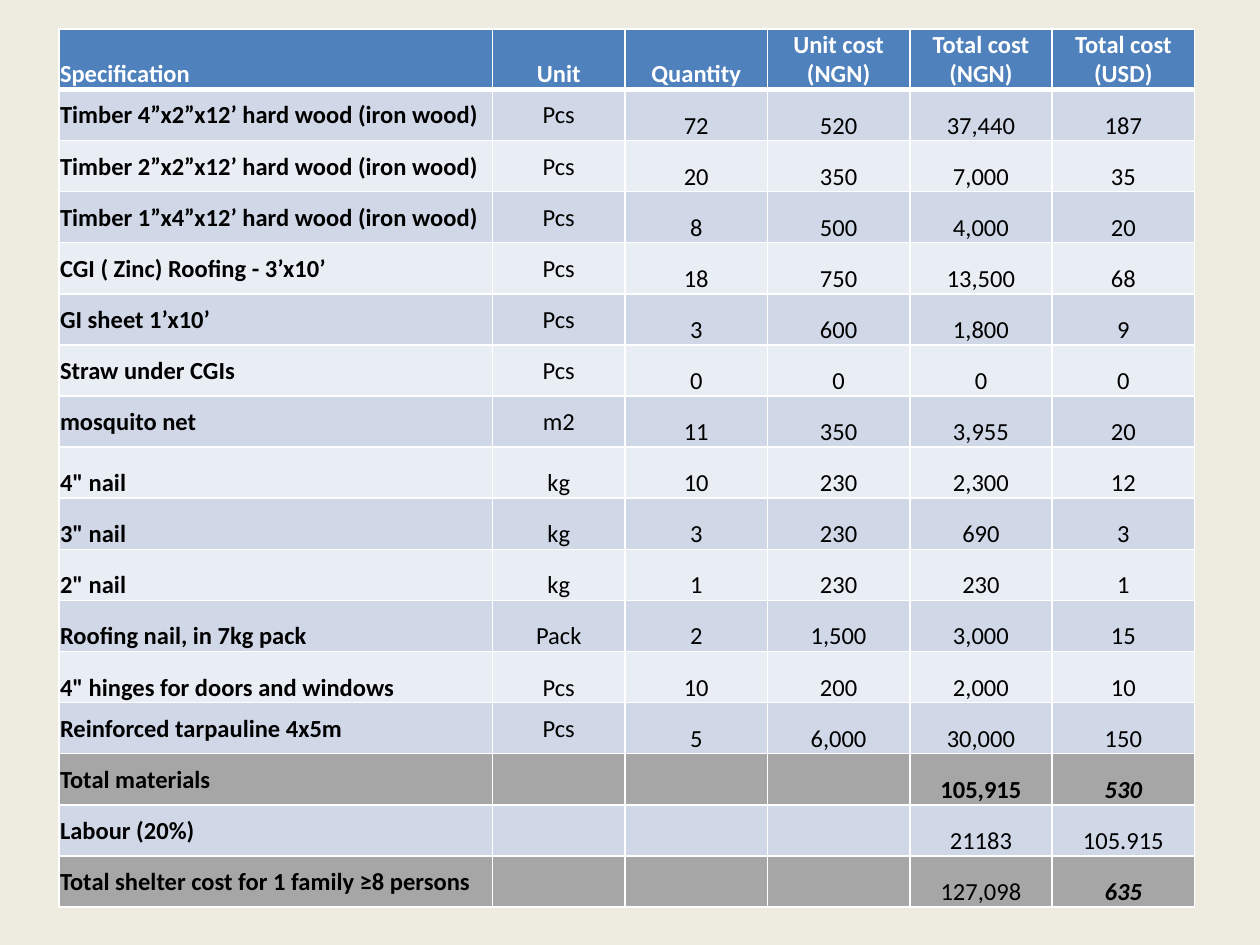
"""Build a one-slide cost table for a family shelter."""
import lxml.etree
import pptx
import pptx.dml.color
import pptx.enum.text
import pptx.oxml.ns
import pptx.util

Cm = pptx.util.Cm
Pt = pptx.util.Pt
ALIGN = pptx.enum.text.PP_ALIGN
ANCHOR = pptx.enum.text.MSO_ANCHOR

COLOURS = {
    "page": "EEECE1",
    "header": "4F81BD",
    "odd": "D0D8E8",
    "even": "E9EDF4",
    "total": "A6A6A6",
    "light": "FFFFFF",
    "dark": "000000",
}
HEADER = ["Specification", "Unit", "Quantity", "Unit cost (NGN)", "Total cost (NGN)", "Total cost (USD)"]
ITEMS = [
    ["Timber 4”x2”x12’ hard wood (iron wood)", "Pcs", "72", "520", "37,440", "187"],
    ["Timber 2”x2”x12’ hard wood (iron wood)", "Pcs", "20", "350", "7,000", "35"],
    ["Timber 1”x4”x12’ hard wood (iron wood)", "Pcs", "8", "500", "4,000", "20"],
    ["CGI ( Zinc) Roofing - 3’x10’", "Pcs", "18", "750", "13,500", "68"],
    ["GI sheet 1’x10’ ", "Pcs", "3", "600", "1,800", "9"],
    ["Straw under CGIs", "Pcs", "0", "0", "0", "0"],
    ["mosquito net", "m2", "11", "350", "3,955", "20"],
    ['4" nail', "kg", "10", "230", "2,300", "12"],
    ['3" nail', "kg", "3", "230", "690", "3"],
    ['2" nail', "kg", "1", "230", "230", "1"],
    ["Roofing nail, in 7kg pack", "Pack", "2", "1,500", "3,000", "15"],
    ['4" hinges for doors and windows', "Pcs", "10", "200", "2,000", "10"],
    ["Reinforced tarpauline 4x5m ", "Pcs", "5", "6,000", "30,000", "150"],
    ["Total materials", "", "", "", "105,915", "530"],
    ["Labour (20%)", "", "", "", "21183", "105.915"],
    ["Total shelter cost for 1 family ≥8 persons", "", "", "", "127,098", "635"],
]
COLUMN_WIDTHS = [8.74, 2.67] + [2.87] * 4
HEADER_HEIGHT, ROW_HEIGHT = 1.22, 1.03
HARDWARE_ROWS = range(8, 13)
BOLD_AMOUNTS = {"105,915", "530", "635"}
ITALIC_AMOUNTS = {"530", "635"}


class SlideBuilder:
    """Hold the text style and the current slide."""

    def __init__(self, deck, font="Calibri", size=14):
        self.font, self.size = font, size
        self.slide = deck.slides.add_slide(deck.slide_layouts[6])

    def colour(self, name):
        return pptx.dml.color.RGBColor.from_string(COLOURS[name])

    def background(self, name):
        fill = self.slide.background.fill
        fill.solid()
        fill.fore_color.rgb = self.colour(name)

    def borders(self, cell, top, bottom):
        properties = cell._tc.get_or_add_tcPr()
        sides = {"lnL": 1, "lnR": 1, "lnT": top, "lnB": bottom}
        for position, (side, width) in enumerate(sides.items()):
            line = lxml.etree.Element(pptx.oxml.ns.qn(f"a:{side}"), w=str(Pt(width)))
            fill = lxml.etree.SubElement(line, pptx.oxml.ns.qn("a:solidFill"))
            lxml.etree.SubElement(fill, pptx.oxml.ns.qn("a:srgbClr"), val=COLOURS["light"])
            properties.insert(position, line)

    def cell(self, cell, text, fill, ink, align, anchor, bold, italic):
        cell.margin_left = cell.margin_right = cell.margin_top = Cm(0.02)
        cell.margin_bottom = 0
        cell.vertical_anchor = anchor
        cell.fill.solid()
        cell.fill.fore_color.rgb = self.colour(fill)
        para = cell.text_frame.paragraphs[0]
        para.text = text
        para.alignment = align
        para.font.size = Pt(self.size)
        for span in para.runs:
            span.font.name, span.font.size = self.font, Pt(self.size)
            span.font.bold, span.font.italic = bold, italic
            span.font.color.rgb = self.colour(ink)

    def cost_table(self, left, top):
        rows = [HEADER] + ITEMS
        height = HEADER_HEIGHT + ROW_HEIGHT * len(ITEMS)
        table = self.slide.shapes.add_table(
            len(rows), len(HEADER), Cm(left), Cm(top), Cm(sum(COLUMN_WIDTHS)), Cm(height)
        ).table
        for column, width in zip(table.columns, COLUMN_WIDTHS):
            column.width = Cm(width)
        for row_index, values in enumerate(rows):
            is_header = row_index == 0
            table.rows[row_index].height = Cm(HEADER_HEIGHT if is_header else ROW_HEIGHT)
            if is_header:
                fill = "header"
            elif values[0].startswith("Total"):
                fill = "total"
            else:
                fill = "odd" if row_index % 2 else "even"
            bottom_row = is_header or row_index in HARDWARE_ROWS
            for column_index, text in enumerate(values):
                cell = table.cell(row_index, column_index)
                middle = column_index < 2 and not bottom_row
                label_align = ALIGN.LEFT if bottom_row else ALIGN.JUSTIFY
                self.cell(
                    cell, text, fill,
                    ink="light" if is_header else "dark",
                    align=ALIGN.CENTER if column_index else label_align,
                    anchor=ANCHOR.MIDDLE if middle else ANCHOR.BOTTOM,
                    bold=is_header or column_index == 0 or text in BOLD_AMOUNTS,
                    italic=text in ITALIC_AMOUNTS,
                )
                self.borders(cell, top=3 if row_index == 1 else 1, bottom=3 if is_header else 1)


def main():
    deck = pptx.Presentation()
    deck.slide_width, deck.slide_height = Cm(25.4), Cm(19.05)
    builder = SlideBuilder(deck)
    builder.background("page")
    builder.cost_table(left=1.19, top=0.58)
    deck.save("out.pptx")


if __name__ == "__main__":
    main()
